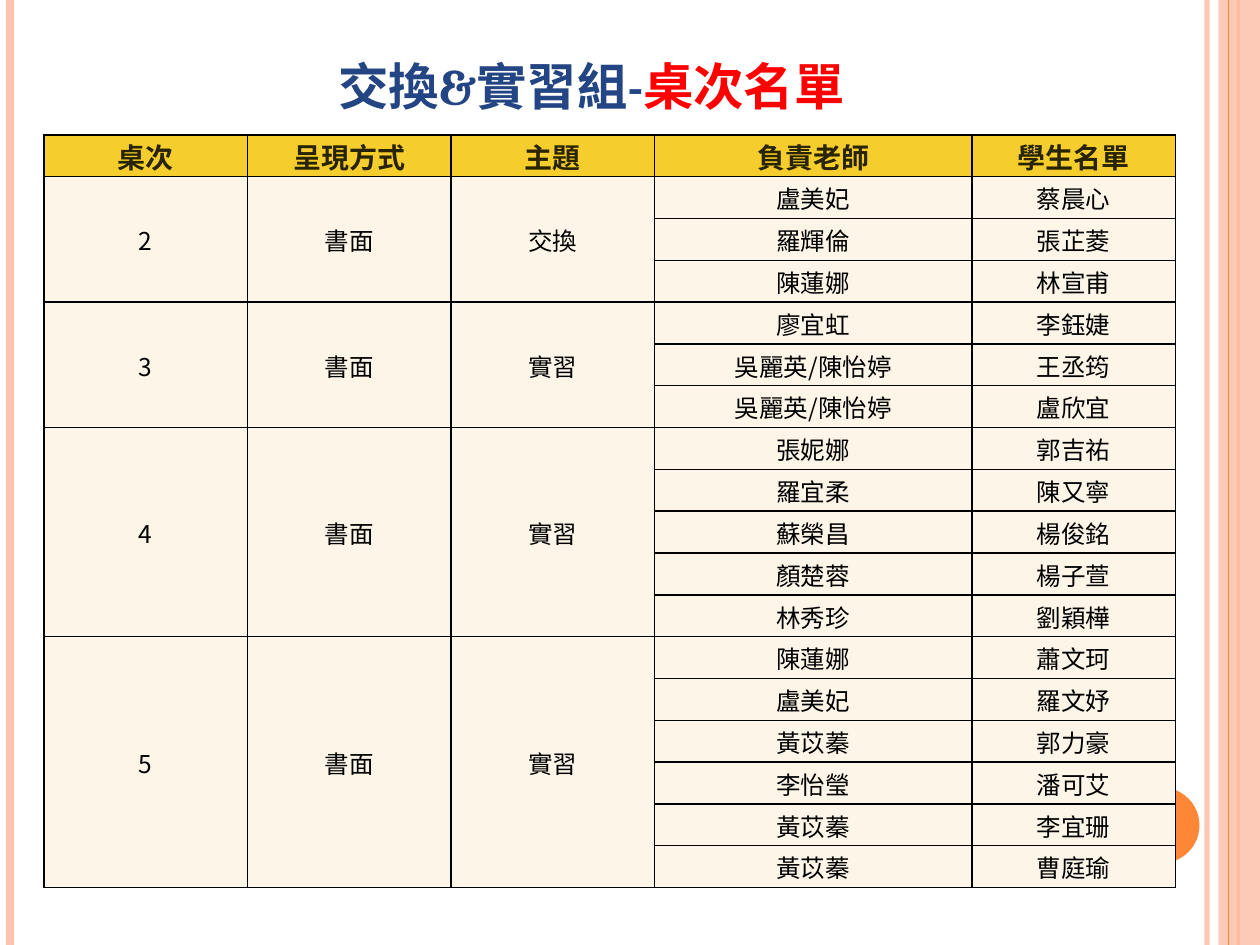
"""Build the seating list slide of the exchange and internship group."""
from dataclasses import dataclass

from lxml.etree import SubElement
from pptx import Presentation
from pptx.dml.color import RGBColor
from pptx.enum.shapes import MSO_CONNECTOR, MSO_SHAPE
from pptx.enum.text import MSO_ANCHOR, PP_ALIGN
from pptx.oxml.ns import qn
from pptx.slide import Slide
from pptx.table import Table, _Cell
from pptx.text.text import _Paragraph
from pptx.util import Inches, Pt

COLOURS = {
    "peach": "FEC3AE", "orange": "FE8637", "navy": "244583", "red": "FF0000",
    "gold": "F5CD2D", "cream": "FDF6E8", "ink": "292400", "black": "000000",
}
WIDTH, HEIGHT = 10, 7.5
CJK_FONT = "Noto Sans CJK SC"
COLUMN_WEIGHTS = (16, 16, 16, 25, 16)
TABLE_LEFT, TABLE_TOP, TABLE_WIDTH, TABLE_HEIGHT = 0.35, 1.07, 8.98, 5.98
HEADINGS = ("桌次", "呈現方式", "主題", "負責老師", "學生名單")


@dataclass(frozen=True)
class Stripe:
    """A full-height line, placed at a share of the slide width."""
    share: float
    colour: str
    points: float
    opacity: int = 100


@dataclass(frozen=True)
class Style:
    """The look of one run of text."""
    size: int
    colour: str
    bold: bool = False
    latin: str = CJK_FONT
    small_caps: bool = False


@dataclass(frozen=True)
class Group:
    """One desk with its topic and its teacher and student pairs."""
    desk: str
    topic: str
    pairs: tuple[tuple[str, str], ...]
    form: str = "書面"


BACK_STRIPES = (
    Stripe(0.958, "peach", 3, 93),
    Stripe(0.008, "peach", 4.5),
    Stripe(0.983, "orange", 1.5),
)
FRONT_STRIPE = Stripe(0.975, "orange", 0.75)
HEADING_STYLE = Style(16, "ink", bold=True)
BODY_STYLE = Style(14, "black")
GROUPS = (
    Group("2", "交換", (("盧美妃", "蔡晨心"), ("羅輝倫", "張芷菱"), ("陳蓮娜", "林宣甫"))),
    Group("3", "實習", (("廖宜虹", "李鈺婕"), ("吳麗英/陳怡婷", "王丞筠"),
                      ("吳麗英/陳怡婷", "盧欣宜"))),
    Group("4", "實習", (("張妮娜", "郭吉祐"), ("羅宜柔", "陳又寧"), ("蘇榮昌", "楊俊銘"),
                      ("顏楚蓉", "楊子萱"), ("林秀珍", "劉穎樺"))),
    Group("5", "實習", (("陳蓮娜", "蕭文珂"), ("盧美妃", "羅文妤"), ("黃苡蓁", "郭力豪"),
                      ("李怡瑩", "潘可艾"), ("黃苡蓁", "李宜珊"), ("黃苡蓁", "曹庭瑜"))),
)


def colour_of(name: str) -> RGBColor:
    return RGBColor.from_string(COLOURS[name])


def set_opacity(properties, percent: int) -> None:
    colour = next(properties.iter(qn("a:srgbClr")))
    SubElement(colour, qn("a:alpha"), val=str(percent * 1000))


def add_stripe(page: Slide, stripe: Stripe) -> None:
    left = Inches(stripe.share * WIDTH)
    line = page.shapes.add_connector(
        MSO_CONNECTOR.STRAIGHT, left, 0, left, Inches(HEIGHT))
    line.line.color.rgb = colour_of(stripe.colour)
    line.line.width = Pt(stripe.points)
    properties = line._element.spPr
    SubElement(properties, qn("a:effectLst"))
    if stripe.opacity < 100:
        set_opacity(properties, stripe.opacity)


def add_block(page: Slide, kind: MSO_SHAPE, bounds: tuple[float, ...],
              colour: str, opacity: int = 100) -> None:
    block = page.shapes.add_shape(kind, *map(Inches, bounds))
    block.shadow.inherit = False
    block.fill.solid()
    block.fill.fore_color.rgb = colour_of(colour)
    block.line.fill.background()
    if opacity < 100:
        set_opacity(block._element.spPr, opacity)


def add_span(para: _Paragraph, text: str, style: Style) -> None:
    para.alignment = PP_ALIGN.CENTER
    span = para.add_run()
    span.text = text
    span.font.size = Pt(style.size)
    span.font.bold = style.bold
    span.font.name = style.latin
    span.font.color.rgb = colour_of(style.colour)
    properties = span._r.get_or_add_rPr()
    SubElement(properties, qn("a:ea"), typeface=CJK_FONT)
    if style.small_caps:
        properties.set("cap", "small")


def add_title(page: Slide) -> None:
    box = page.shapes.add_textbox(*map(Inches, (0.61, 0.2, 8.17, 0.79)))
    frame = box.text_frame
    frame.word_wrap = True
    frame.vertical_anchor = MSO_ANCHOR.BOTTOM
    for text, colour in (("交換&實習組-", "navy"), ("桌次名單", "red")):
        add_span(frame.paragraphs[0], text, Style(36, colour, True, "Cambria", True))


def format_cell(cell: _Cell, fill: str) -> None:
    cell.margin_left = cell.margin_right = cell.margin_top = Inches(0.01)
    cell.margin_bottom = 0
    cell.vertical_anchor = MSO_ANCHOR.MIDDLE
    properties = cell._tc.get_or_add_tcPr()
    for side in ("lnL", "lnR", "lnT", "lnB"):
        border = SubElement(properties, qn(f"a:{side}"), w=str(Pt(1)))
        paint = SubElement(border, qn("a:solidFill"))
        SubElement(paint, qn("a:srgbClr"), val=COLOURS["black"])
    cell.fill.solid()
    cell.fill.fore_color.rgb = colour_of(fill)


def write_row(table: Table, row: int, first_column: int,
              texts: tuple[str, ...], style: Style) -> None:
    for column, text in enumerate(texts, first_column):
        add_span(table.cell(row, column).text_frame.paragraphs[0], text, style)


def add_seating_table(page: Slide) -> None:
    row_count = 1 + sum(len(group.pairs) for group in GROUPS)
    bounds = (TABLE_LEFT, TABLE_TOP, TABLE_WIDTH, TABLE_HEIGHT)
    table = page.shapes.add_table(
        row_count, len(HEADINGS), *map(Inches, bounds)).table
    for column, weight in zip(table.columns, COLUMN_WEIGHTS):
        column.width = Inches(TABLE_WIDTH * weight / sum(COLUMN_WEIGHTS))
    for index, row in enumerate(table.rows):
        row.height = Inches(TABLE_HEIGHT / row_count)
        for cell in row.cells:
            format_cell(cell, "cream" if index else "gold")
    write_row(table, 0, 0, HEADINGS, HEADING_STYLE)
    top = 1
    for group in GROUPS:
        bottom = top + len(group.pairs) - 1
        for column in range(3):
            table.cell(top, column).merge(table.cell(bottom, column))
        write_row(table, top, 0, (group.desk, group.form, group.topic), BODY_STYLE)
        for row, pair in enumerate(group.pairs, top):
            write_row(table, row, 3, pair, BODY_STYLE)
        top = bottom + 1


def main() -> None:
    deck = Presentation()
    deck.slide_width, deck.slide_height = Inches(WIDTH), Inches(HEIGHT)
    page = deck.slides.add_slide(deck.slide_layouts[6])
    for stripe in BACK_STRIPES:
        add_stripe(page, stripe)
    add_block(page, MSO_SHAPE.RECTANGLE, (9.67, 0, 0.33, HEIGHT), "peach", 87)
    add_stripe(page, FRONT_STRIPE)
    add_block(page, MSO_SHAPE.OVAL, (8.92, 6.25, 0.6, 0.6), "orange")
    add_title(page)
    add_seating_table(page)
    deck.save("out.pptx")


if __name__ == "__main__":
    main()
